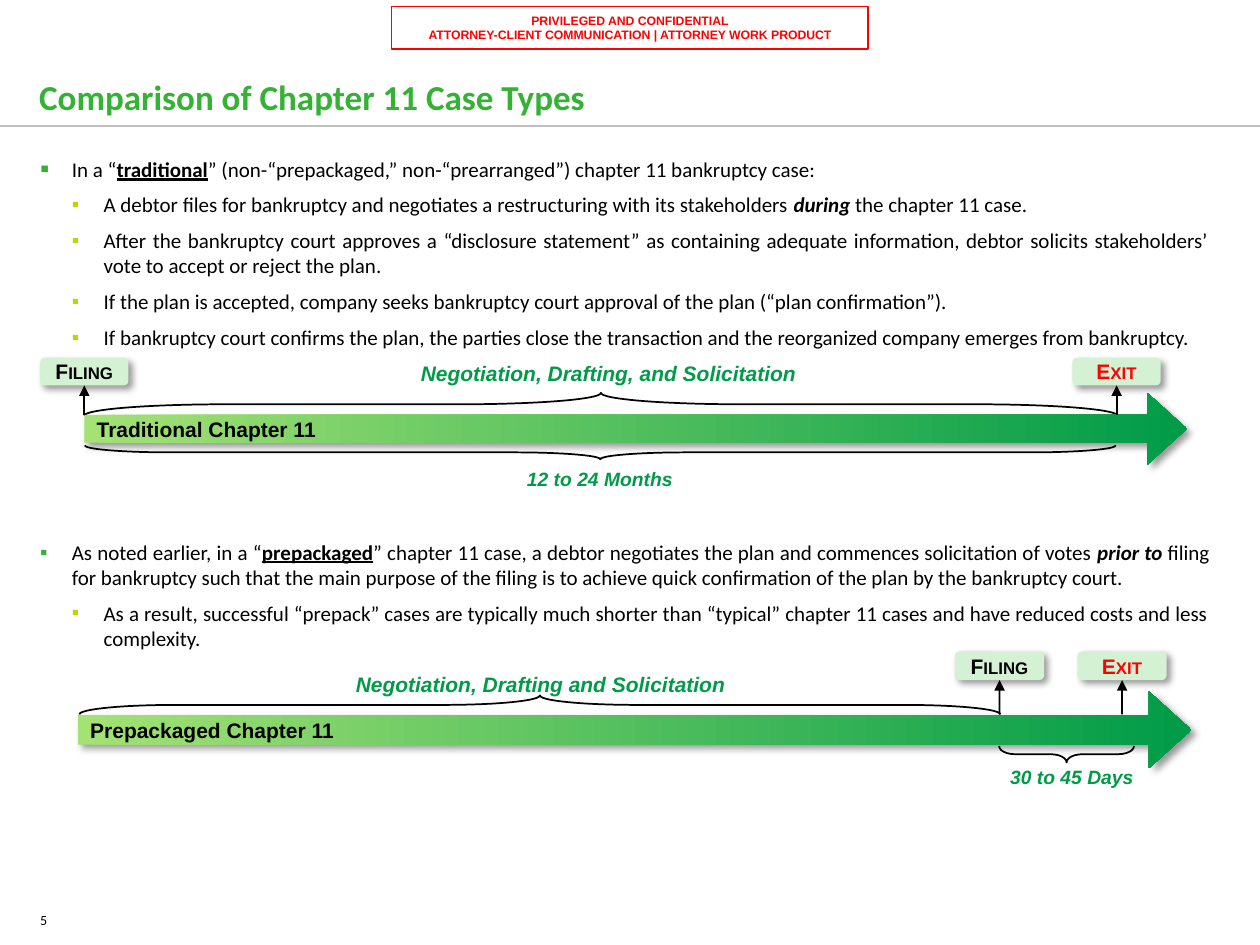
from dataclasses import dataclass

from lxml import etree
from pptx import Presentation
from pptx.dml.color import RGBColor
from pptx.enum.shapes import MSO_CONNECTOR, MSO_SHAPE
from pptx.enum.text import MSO_ANCHOR, MSO_AUTO_SIZE, PP_ALIGN
from pptx.oxml.ns import qn
from pptx.util import Cm, Pt

STRAIGHT = MSO_CONNECTOR.STRAIGHT
RECTANGLE, ROUNDED = MSO_SHAPE.RECTANGLE, MSO_SHAPE.ROUNDED_RECTANGLE
BRACE, ARROW = MSO_SHAPE.RIGHT_BRACE, MSO_SHAPE.RIGHT_ARROW
LEFT, CENTER, JUSTIFY = PP_ALIGN.LEFT, PP_ALIGN.CENTER, PP_ALIGN.JUSTIFY
TOP, MIDDLE, BOTTOM = MSO_ANCHOR.TOP, MSO_ANCHOR.MIDDLE, MSO_ANCHOR.BOTTOM
FIXED_SIZE = MSO_AUTO_SIZE.NONE
BOTTOM_SIDE = 2
INDENT = Cm(0.64)

COLORS = {
    "black": "000000", "red": "FF0000", "title": "34B233", "rule": "BFBFBF",
    "lime": "BED600", "caption": "009B48", "arrow_start": "A4E274",
    "arrow_end": "009B48", "tag": "D4F2D3",
}
FORMATS = {
    "title": {"name": "Calibri", "size": Pt(20), "bold": True},
    "number": {"name": "Calibri", "size": Pt(8)},
    "notice": {"name": "Arial", "size": Pt(7), "bold": True},
    "plain": {"name": "Calibri", "size": Pt(12)},
    "term": {"name": "Calibri", "size": Pt(12), "bold": True, "underline": True},
    "stress": {"name": "Calibri", "size": Pt(12), "bold": True, "italic": True},
    "label": {"name": "Arial", "size": Pt(12), "bold": True},
    "activity": {"name": "Arial", "size": Pt(12), "bold": True, "italic": True},
    "duration": {"name": "Arial", "size": Pt(11), "bold": True, "italic": True},
}


@dataclass
class Box:
    left: float
    top: float
    width: float
    height: float

    def lengths(self):
        return [Cm(v) for v in (self.left, self.top, self.width, self.height)]


@dataclass
class Bullet:
    level: int
    runs: list
    fixed_spacing: bool = True
    marker_percent: int = 100


@dataclass
class Caption:
    text: str
    style: str
    box: Box


@dataclass
class Brace:
    box: Box
    points_up: bool
    curl: float


@dataclass
class Tag:
    text: str
    color: str
    box: Box


@dataclass
class Timeline:
    name: str
    arrow: Box
    pointer_start: float
    tags: list
    braces: list
    captions: list


TRADITIONAL = [
    Bullet(1, [("In a “", "plain"), ("traditional", "term"),
               ("” (non-“prepackaged,” non-“prearranged”) chapter 11 bankruptcy case:", "plain")],
           fixed_spacing=False, marker_percent=125),
    Bullet(2, [("A debtor files for bankruptcy and negotiates a restructuring with its stakeholders ", "plain"),
               ("during ", "stress"), ("the chapter 11 case.", "plain")]),
    Bullet(2, [("After the bankruptcy court approves a “disclosure statement” as containing adequate "
                "information, debtor solicits stakeholders’ vote to accept or reject the plan.", "plain")]),
    Bullet(2, [("If the plan is accepted, company seeks bankruptcy court approval of the plan "
                "(“plan confirmation”).", "plain")]),
    Bullet(2, [("If bankruptcy court confirms the plan, the parties close the transaction and the "
                "reorganized company emerges from bankruptcy.", "plain")]),
]
PREPACKAGED = [
    Bullet(1, [("As noted earlier, in a “", "plain"), ("prepackaged", "term"),
               ("” chapter 11 case, a debtor negotiates the plan and commences solicitation of votes ", "plain"),
               ("prior to ", "stress"),
               ("filing for bankruptcy such that the main purpose of the filing is to achieve quick "
                "confirmation of the plan by the bankruptcy court.", "plain")]),
    Bullet(2, [("As a result, successful “prepack” cases are typically much shorter than “typical” "
                "chapter 11 cases and have reduced costs and less complexity.", "plain")]),
]
TIMELINES = [
    Timeline(
        "Traditional Chapter 11", Box(1.7, 7.92, 22.23, 1.45), 8.37,
        [Tag("Filing", "black", Box(0.81, 7.21, 1.78, 0.56)),
         Tag("Exit", "red", Box(21.62, 7.21, 1.78, 0.56))],
        [Brace(Box(1.7, 7.92, 20.83, 0.46), True, 6.18),
         Brace(Box(1.71, 8.98, 20.78, 0.28), False, 6.18)],
        [Caption("Negotiation, Drafting, and Solicitation", "activity", Box(7.09, 7.14, 10.36, 0.56)),
         Caption("12 to 24 Months", "duration", Box(10.29, 9.3, 3.61, 0.53))]),
    Timeline(
        "Prepackaged Chapter 11", Box(1.57, 13.94, 22.45, 1.55), 14.4,
        [Tag("Filing", "black", Box(19.25, 13.13, 1.8, 0.58)),
         Tag("Exit", "red", Box(21.72, 13.13, 1.8, 0.58))],
        [Brace(Box(1.6, 14.02, 18.57, 0.38), True, 5.13),
         Brace(Box(20.14, 15.04, 2.72, 0.33), False, 0.97)],
        [Caption("Negotiation, Drafting and Solicitation", "activity", Box(6.1, 13.41, 9.6, 0.56)),
         Caption("30 to 45 Days", "duration", Box(19.69, 15.29, 3.84, 0.56))]),
]


def rgb(key: str) -> RGBColor:
    return RGBColor.from_string(COLORS[key])


def add_run(paragraph, text: str, style: str, color: str = "black"):
    run = paragraph.add_run()
    run.text = text
    for attribute, value in FORMATS[style].items():
        setattr(run.font, attribute, value)
    run.font.color.rgb = rgb(color)
    return run


def set_frame(holder, anchor=TOP, insets=(0.25, 0.13, 0.25, 0.13)):
    frame = holder.text_frame
    frame.word_wrap = True
    frame.auto_size = FIXED_SIZE
    frame.vertical_anchor = anchor
    for side, inset in zip(("left", "top", "right", "bottom"), insets):
        setattr(frame, f"margin_{side}", Cm(inset))
    return frame


def write_line(frame, text: str, style: str, color: str, align=LEFT):
    paragraph = frame.paragraphs[0]
    paragraph.alignment = align
    return add_run(paragraph, text, style, color)


def add_bullets(slide, box: Box, bullets: list) -> None:
    frame = set_frame(slide.shapes.add_textbox(*box.lengths()), insets=(0, 0, 0, 0))
    for index, bullet in enumerate(bullets):
        paragraph = frame.add_paragraph() if index else frame.paragraphs[0]
        properties = paragraph._p.get_or_add_pPr()
        properties.set("marL", str(INDENT * bullet.level))
        properties.set("indent", str(-INDENT))
        marker_color = etree.SubElement(properties, qn("a:buClr"))
        hue = COLORS["title" if bullet.level == 1 else "lime"]
        etree.SubElement(marker_color, qn("a:srgbClr"), val=hue)
        etree.SubElement(properties, qn("a:buSzPct"), val=str(bullet.marker_percent * 1000))
        etree.SubElement(properties, qn("a:buFont"), typeface="Arial")
        etree.SubElement(properties, qn("a:buChar"), char="▪")
        paragraph.alignment = JUSTIFY
        paragraph.space_after = Pt(6)
        if bullet.fixed_spacing:
            paragraph.line_spacing = Pt(14.4)
        for text, style in bullet.runs:
            add_run(paragraph, text, style)


def add_shadow(shape) -> None:
    effects = etree.SubElement(shape._element.spPr, qn("a:effectLst"))
    shadow = etree.SubElement(effects, qn("a:outerShdw"), blurRad=str(Pt(4)), dist=str(Pt(3)),
                              dir="2700000", algn="tl", rotWithShape="0")
    color = etree.SubElement(shadow, qn("a:srgbClr"), val=COLORS["black"])
    etree.SubElement(color, qn("a:alpha"), val="40000")


def add_line(slide, start: tuple, end: tuple, color: str, width: float):
    line = slide.shapes.add_connector(STRAIGHT, *(Cm(v) for v in start + end))
    line.line.color.rgb = rgb(color)
    line.line.width = Pt(width)
    etree.SubElement(line._element.spPr, qn("a:effectLst"))
    return line


def add_brace(slide, brace: Brace) -> None:
    box = brace.box
    center_x, center_y = box.left + box.width / 2, box.top + box.height / 2
    upright = Box(center_x - box.height / 2, center_y - box.width / 2, box.height, box.width)
    shape = slide.shapes.add_shape(BRACE, *upright.lengths())
    shape.rotation = 270 if brace.points_up else 90
    shape.adjustments[0] = brace.curl
    shape.shadow.inherit = False
    shape.fill.background()
    shape.line.color.rgb = rgb("black")
    shape.line.width = Pt(1)


def add_arrow(slide, box: Box, name: str) -> None:
    arrow = slide.shapes.add_shape(ARROW, *box.lengths())
    arrow.adjustments[0], arrow.adjustments[1] = 0.385, 0.553
    arrow.fill.gradient()
    arrow.fill.gradient_angle = 0
    for stop, color in zip(arrow.fill.gradient_stops, ("arrow_start", "arrow_end")):
        stop.color.rgb = rgb(color)
    arrow.line.fill.background()
    add_shadow(arrow)
    write_line(set_frame(arrow, MIDDLE), name, "label", "black")


def add_tag(slide, tag: Tag, pointer_start: float) -> None:
    box = tag.box
    shape = slide.shapes.add_shape(ROUNDED, *box.lengths())
    shape.fill.solid()
    shape.fill.fore_color.rgb = rgb("tag")
    shape.line.fill.background()
    add_shadow(shape)
    frame = set_frame(shape, MIDDLE, (0.13, 0.13, 0.13, 0.13))
    run = write_line(frame, tag.text, "label", tag.color, CENTER)
    run._r.get_or_add_rPr().set("cap", "small")
    middle = box.left + box.width / 2
    pointer = add_line(slide, (middle, pointer_start), (middle, box.top + box.height), "black", 1)
    pointer.end_connect(shape, BOTTOM_SIDE)
    etree.SubElement(pointer.line._get_or_add_ln(), qn("a:tailEnd"), type="triangle")


def add_timeline(slide, timeline: Timeline) -> None:
    for brace in timeline.braces:
        add_brace(slide, brace)
    add_arrow(slide, timeline.arrow, timeline.name)
    for tag in timeline.tags:
        add_tag(slide, tag, timeline.pointer_start)
    for caption in timeline.captions:
        frame = set_frame(slide.shapes.add_textbox(*caption.box.lengths()))
        write_line(frame, caption.text, caption.style, "caption", CENTER)


def add_heading(slide) -> None:
    title = slide.shapes.title
    title.left, title.top, title.width, title.height = Box(0.79, 0.56, 23.6, 1.93).lengths()
    frame = set_frame(title, BOTTOM, (0, 0.13, 0.25, 0.13))
    write_line(frame, "Comparison of Chapter 11 Case Types", "title", "title")
    add_line(slide, (0, 2.54), (25.4, 2.54), "rule", 0.75)
    notice = slide.shapes.add_shape(RECTANGLE, *Box(7.9, 0.13, 9.6, 0.86).lengths())
    notice.shadow.inherit = False
    notice.fill.background()
    notice.line.color.rgb = rgb("red")
    notice.line.width = Pt(0.75)
    frame = set_frame(notice)
    write_line(frame, "PRIVILEGED AND CONFIDENTIAL", "notice", "red", CENTER)
    second = frame.add_paragraph()
    second.alignment = CENTER
    add_run(second, "ATTORNEY-CLIENT COMMUNICATION | ATTORNEY WORK PRODUCT", "notice", "red")


def main() -> None:
    deck = Presentation()
    deck.slide_width, deck.slide_height = Cm(25.4), Cm(19.05)
    slide = deck.slides.add_slide(deck.slide_layouts[5])
    add_heading(slide)
    add_bullets(slide, Box(0.81, 3.15, 23.57, 4), TRADITIONAL)
    add_bullets(slide, Box(0.81, 10.87, 23.57, 2.3), PREPACKAGED)
    for timeline in TIMELINES:
        add_timeline(slide, timeline)
    number = slide.shapes.add_textbox(*Box(0.81, 18.24, 5.33, 0.61).lengths())
    write_line(set_frame(number, insets=(0, 0.13, 0, 0.13)), "5", "number", "black")
    deck.save("out.pptx")


if __name__ == "__main__":
    main()
